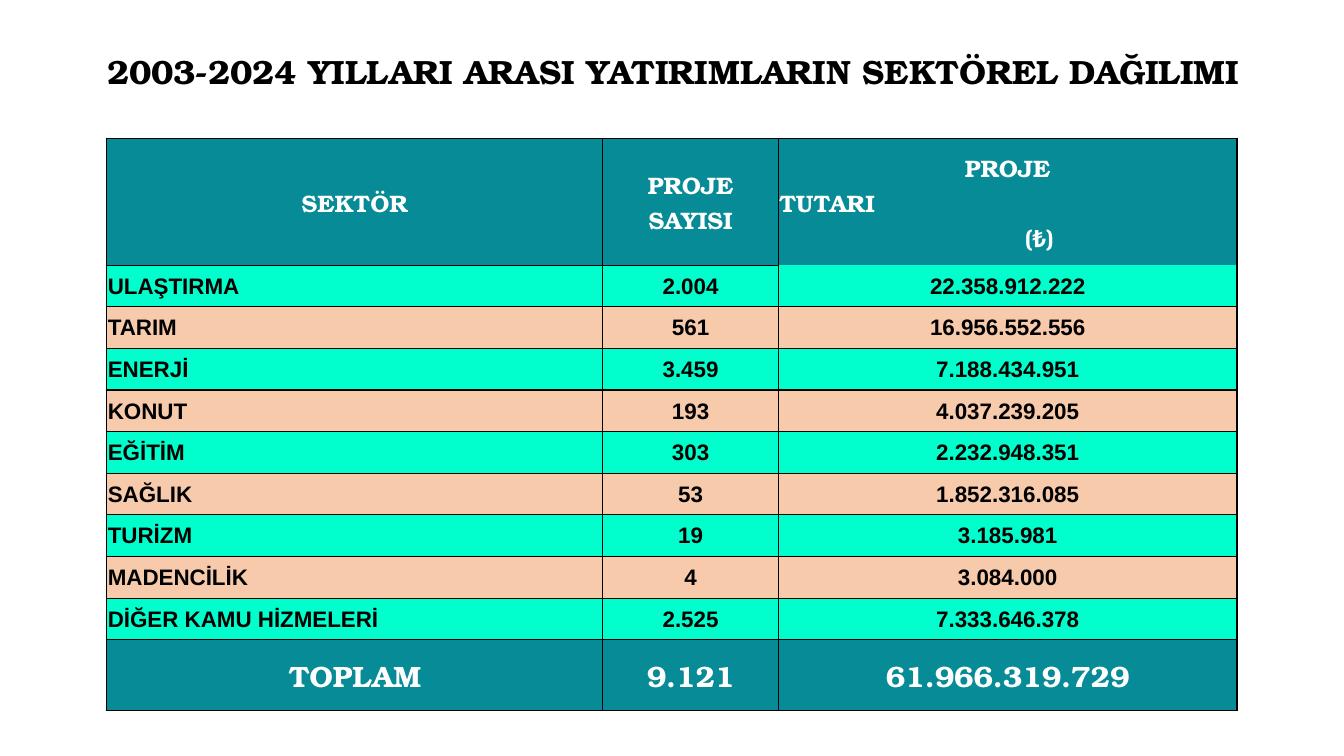
from lxml.etree import SubElement
from pptx import Presentation
from pptx.dml.color import RGBColor
from pptx.enum.text import MSO_ANCHOR, PP_ALIGN
from pptx.oxml.ns import qn
from pptx.util import Inches, Pt

COLORS = {"black": "000000", "white": "FFFFFF", "teal": "068B97",
          "mint": "00FFCC", "peach": "F7CAAC"}
SERIF, SANS = "TeX Gyre Bonum", "Arial"
LEFT, MID = PP_ALIGN.LEFT, PP_ALIGN.CENTER
WIDTHS = [4.92, 1.74, 4.55]
HEIGHT, HEAD, TOTAL = 5.68, 1.26, 0.7
ROWS = [
    ("SEKTÖR", "PROJE\nSAYISI", "PROJE\nTUTARI\n(₺)"),
    ("ULAŞTIRMA", "2.004", "22.358.912.222"),
    ("TARIM", "561", "16.956.552.556"),
    ("ENERJİ", "3.459", "7.188.434.951"),
    ("KONUT", "193", "4.037.239.205"),
    ("EĞİTİM", "303", "2.232.948.351"),
    ("SAĞLIK", "53", "1.852.316.085"),
    ("TURİZM", "19", "3.185.981"),
    ("MADENCİLİK", "4", "3.084.000"),
    ("DİĞER KAMU HİZMELERİ", "2.525", "7.333.646.378"),
    ("TOPLAM", "9.121", "61.966.319.729"),
]


def style_text(frame, size, font, color, align):
    """Format every paragraph and run of a text frame."""
    for para in frame.paragraphs:
        para.alignment = align
        for run in para.runs:
            run.font.size = Pt(size)
            run.font.name = font
            run.font.bold = True
            run.font.color.rgb = RGBColor.from_string(COLORS[color])


def add_title(slide, text):
    """Add the centred slide title."""
    box = slide.shapes.add_textbox(Inches(0.85), Inches(0.46), Inches(11.65), Inches(0.5))
    frame = box.text_frame
    frame.word_wrap = True
    frame.text = text
    style_text(frame, 24, SERIF, "black", MID)


def add_borders(cell, gap):
    """Draw the cell's black edges, leaving the gap side open."""
    props = cell._tc.get_or_add_tcPr()
    for side in "LRTB":
        line = SubElement(props, qn(f"a:ln{side}"), w=str(Pt(1)))
        if side == gap:
            SubElement(line, qn("a:noFill"))
        else:
            fill = SubElement(line, qn("a:solidFill"))
            SubElement(fill, qn("a:srgbClr"), val=COLORS["black"])


def fill_cell(cell, text, look, align, gap):
    """Write one cell and set its margins, borders and fill."""
    size, font, ink, back = look
    cell.margin_left = cell.margin_right = cell.margin_top = Inches(0.01)
    cell.margin_bottom = 0
    cell.vertical_anchor = MSO_ANCHOR.MIDDLE
    cell.text_frame.text = text
    style_text(cell.text_frame, size, font, ink, align)
    add_borders(cell, gap)
    cell.fill.solid()
    cell.fill.fore_color.rgb = RGBColor.from_string(COLORS[back])


def shape_amount(cell):
    """Stagger the amount heading and set its currency sign."""
    _, word, unit = cell.text_frame.paragraphs
    word.alignment = LEFT
    unit._p.get_or_add_pPr().set("marL", str(Inches(0.63)))
    unit.text = ""
    for part in "(₺)":
        unit.add_run().text = part
    style_text(cell.text_frame, 17, SERIF, "white", MID)
    word.alignment = LEFT
    unit.runs[1].font.name = SANS


def row_look(index):
    """Return size, font, text colour and fill of a row."""
    if index == 0:
        return 17, SERIF, "white", "teal"
    if index == len(ROWS) - 1:
        return 21, SERIF, "white", "teal"
    return 16, SANS, "black", "mint" if index % 2 else "peach"


def add_sectors(slide):
    """Add the table of sectors."""
    frame = slide.shapes.add_table(len(ROWS), len(WIDTHS), Inches(1.06), Inches(1.37),
                                   Inches(sum(WIDTHS)), Inches(HEIGHT))
    table = frame.table
    table.first_row = table.horz_banding = False
    for col, width in zip(table.columns, WIDTHS):
        col.width = Inches(width)
    last = len(ROWS) - 1
    body = (HEIGHT - HEAD - TOTAL) / (last - 1)
    gaps = {(0, 2): "B", (1, 2): "T"}
    for r, texts in enumerate(ROWS):
        table.rows[r].height = Inches({0: HEAD, last: TOTAL}.get(r, body))
        for c, text in enumerate(texts):
            align = LEFT if c == 0 and 0 < r < last else MID
            fill_cell(table.cell(r, c), text, row_look(r), align, gaps.get((r, c)))
    shape_amount(table.cell(0, 2))


def main():
    """Build and save the slide."""
    deck = Presentation()
    deck.slide_width, deck.slide_height = Inches(13.33), Inches(7.5)
    slide = deck.slides.add_slide(deck.slide_layouts[6])
    add_title(slide, "2003-2024 YILLARI ARASI YATIRIMLARIN SEKTÖREL DAĞILIMI")
    add_sectors(slide)
    deck.save("out.pptx")


if __name__ == "__main__":
    main()
